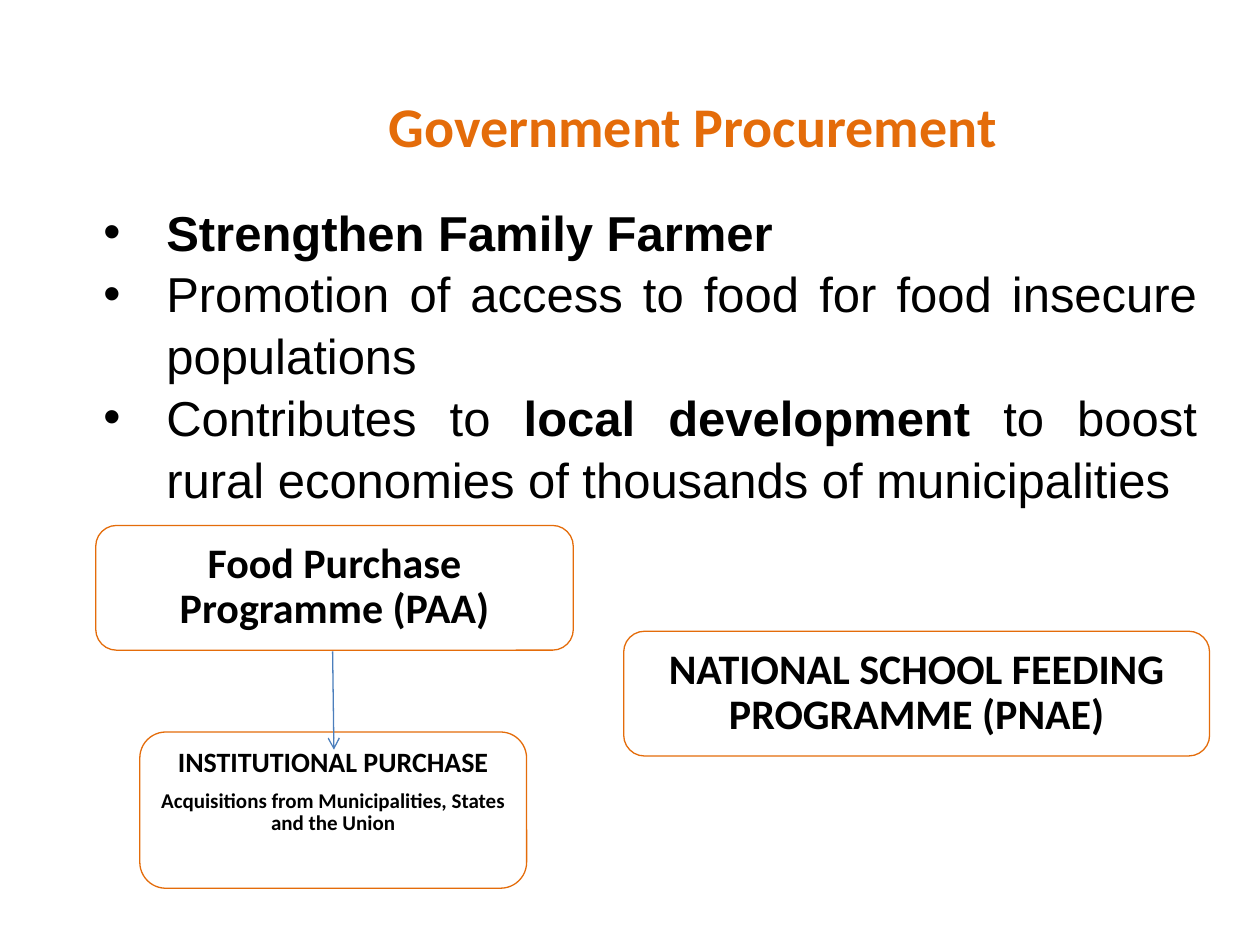
import pptx
import pptx.util
import pptx.dml.color
import pptx.enum.shapes
import pptx.enum.text
import pptx.oxml.ns
from lxml import etree

COLORS = {"accent": "E46C0A", "text": "000000", "arrow": "4B7EBC"}
ALIGN = pptx.enum.text.PP_ALIGN
ANCHOR = pptx.enum.text.MSO_ANCHOR
INSET = 0.09

BULLETS = [
    [("Strengthen Family Farmer", True)],
    [("Promotion of access to food for food insecure populations", False)],
    [("Contributes to ", False), ("local development", True),
     (" to boost rural economies of thousands of municipalities", False)],
]

# Place, lines as (text, size), bottom inset
PROGRAMMES = [
    ((0.76, 4.17, 3.79, 0.99), [("Food Purchase Programme (PAA)", 24)], INSET),
    ((1.11, 5.81, 3.07, 1.24),
     [("INSTITUTIONAL PURCHASE", 16),
      ("Acquisitions from Municipalities, States and the Union", 12)], 0.36),
    ((4.95, 5.01, 4.65, 0.99),
     [("NATIONAL SCHOOL FEEDING PROGRAMME (PNAE)", 24)], INSET),
]


def inches(lengths):
    return [pptx.util.Inches(length) for length in lengths]


def rgb(name):
    return pptx.dml.color.RGBColor.from_string(COLORS[name])


def add_xml(parent, tag, **attributes):
    return etree.SubElement(parent, pptx.oxml.ns.qn(tag), **attributes)


def place(shape, box):
    shape.left, shape.top, shape.width, shape.height = inches(box)


def set_font(font, name, size, color, bold=None):
    font.name = name
    font.size = pptx.util.Pt(size)
    font.color.rgb = rgb(color)
    font.bold = bold


def fill_title(title):
    place(title, (1, 0.21, 9, 1.57))
    frame = title.text_frame
    frame.text = "Government Procurement"
    frame.auto_size = pptx.enum.text.MSO_AUTO_SIZE.NONE
    frame.vertical_anchor = ANCHOR.MIDDLE
    paragraph = frame.paragraphs[0]
    paragraph.alignment = ALIGN.CENTER
    set_font(paragraph.font, "Calibri", 32, "accent", True)


def fill_bullets(body):
    place(body, (0.72, 1.53, 8.88, 2.46))
    frame = body.text_frame
    frame.auto_size = pptx.enum.text.MSO_AUTO_SIZE.NONE
    indent = pptx.util.Inches(0.5)
    for index, runs in enumerate(BULLETS):
        paragraph = frame.add_paragraph() if index else frame.paragraphs[0]
        paragraph.alignment = ALIGN.JUSTIFY
        paragraph.space_before = pptx.util.Pt(0)
        paragraph.line_spacing = 1.05
        properties = paragraph._p.get_or_add_pPr()
        properties.set("marL", str(indent))
        properties.set("indent", str(-indent))
        add_xml(properties, "a:buFont", typeface="Arial")
        add_xml(properties, "a:buChar", char="•")
        set_font(paragraph.font, "Arial", 28, "text")
        for text, bold in runs:
            run = paragraph.add_run()
            run.text = text
            run.font.bold = bold


def add_programme(slide, box, lines, bottom_inset):
    shape = slide.shapes.add_shape(
        pptx.enum.shapes.MSO_SHAPE.ROUNDED_RECTANGLE, *inches(box))
    shape.shadow.inherit = False
    shape.fill.background()
    shape.line.color.rgb = rgb("accent")
    shape.line.width = pptx.util.Pt(0.75)
    frame = shape.text_frame
    frame.word_wrap = True
    frame.vertical_anchor = ANCHOR.BOTTOM
    frame.margin_left = frame.margin_right = 0
    frame.margin_top, frame.margin_bottom = inches((INSET, bottom_inset))
    for index, (text, size) in enumerate(lines):
        paragraph = frame.add_paragraph() if index else frame.paragraphs[0]
        paragraph.text = text
        paragraph.alignment = ALIGN.CENTER
        paragraph.line_spacing = 0.9
        paragraph.space_after = pptx.util.Pt(6.3)
        set_font(paragraph.font, "Calibri", size, "text", True)


def add_arrow(slide, start, end):
    arrow = slide.shapes.add_connector(
        pptx.enum.shapes.MSO_CONNECTOR.STRAIGHT, *inches(start + end))
    arrow.line.color.rgb = rgb("arrow")
    arrow.line.width = pptx.util.Pt(0.75)
    add_xml(arrow.line._get_or_add_ln(), "a:tailEnd", type="arrow")
    add_xml(arrow._element.spPr, "a:effectLst")


def main():
    presentation = pptx.Presentation()
    presentation.slide_width, presentation.slide_height = inches((10, 7.5))
    slide = presentation.slides.add_slide(presentation.slide_layouts[1])
    fill_title(slide.shapes.title)
    fill_bullets(slide.placeholders[1])
    for box, lines, bottom_inset in PROGRAMMES:
        add_programme(slide, box, lines, bottom_inset)
    add_arrow(slide, (2.64, 5.17), (2.65, 5.95))
    presentation.save("out.pptx")


if __name__ == "__main__":
    main()
